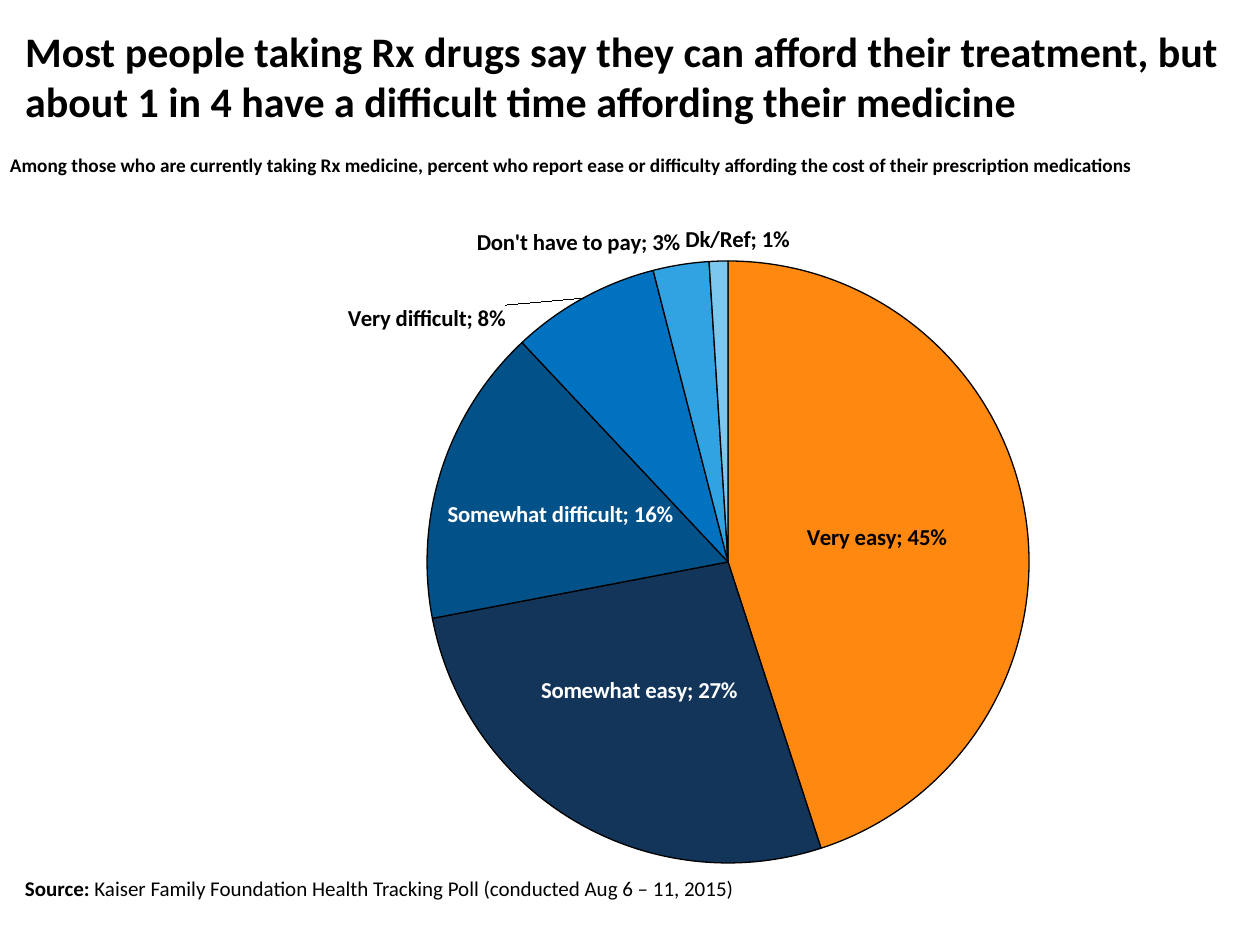
from dataclasses import dataclass
from typing import Optional

import pptx
import pptx.chart.data
import pptx.dml.color
import pptx.enum.chart
import pptx.enum.text
import pptx.oxml
import pptx.oxml.ns
import pptx.util

Position = pptx.enum.chart.XL_LABEL_POSITION
Anchor = pptx.enum.text.MSO_ANCHOR
WIDTH, HEIGHT = pptx.util.Inches(10), pptx.util.Inches(7.5)


@dataclass(frozen=True)
class Theme:
    font: str = "Calibri"
    black: str = "000000"
    white: str = "FFFFFF"
    title_size: int = 24
    label_size: int = 13
    source_size: int = 12
    subtitle_size: int = 11


@dataclass(frozen=True)
class Box:
    """Left, top, width and height in inches."""
    left: float
    top: float
    width: float
    height: float

    def lengths(self) -> list:
        return [pptx.util.Inches(value) for value in
                (self.left, self.top, self.width, self.height)]


@dataclass(frozen=True)
class Slice:
    name: str
    share: float
    fill: str
    label_color: str = "000000"
    position: Optional[Position] = None
    shift: tuple = (0, 0)  # label offset, as shares of the chart's size


THEME = Theme()
SLICES = [
    Slice("Very easy", 0.45, "FF8811", THEME.black, Position.CENTER),
    Slice("Somewhat easy", 0.27, "133559", THEME.white, Position.CENTER, (-0.01, 0)),
    Slice("Somewhat difficult", 0.16, "025189", THEME.white, Position.CENTER, (-0.02, 0)),
    Slice("Very difficult", 0.08, "0072C0", THEME.black, Position.OUTSIDE_END, (-0.06, 0.06)),
    Slice("Don't have to pay", 0.03, "31A3E3"),
    Slice("Dk/Ref", 0.01, "7BC7ED"),
]
CHART_BOX = Box(-0.02, 1.67, 9.82, 5.43)
PIE_BOX = Box(3.39, 2.07, 4.78, 4.78)


def rgb(color: str):
    return pptx.dml.color.RGBColor.from_string(color)


def style_font(font, size: int, color: str = THEME.black, bold: Optional[bool] = True) -> None:
    font.name = THEME.font
    font.size = pptx.util.Pt(size)
    font.color.rgb = rgb(color)
    font.bold = bold


def xml(body: str):
    tag, rest = body[1:].split(" ", 1)
    return pptx.oxml.parse_xml(f"<{tag} {pptx.oxml.ns.nsdecls('c')} {rest}")


def manual_layout(x: float, y: float, extra: str = "", target: str = ""):
    return xml(f'<c:layout ><c:manualLayout>{target}<c:x val="{x:.3f}"/>'
               f'<c:y val="{y:.3f}"/>{extra}</c:manualLayout></c:layout>')


def place_pie(chart) -> None:
    """Fix the plot area so that the circle fills PIE_BOX."""
    plot_area = chart._chartSpace.chart.plotArea
    for old in plot_area.findall(pptx.oxml.ns.qn("c:layout")):
        plot_area.remove(old)
    plot_area.insert(0, manual_layout(
        (PIE_BOX.left - CHART_BOX.left) / CHART_BOX.width,
        (PIE_BOX.top - CHART_BOX.top) / CHART_BOX.height,
        f'<c:w val="{PIE_BOX.width / CHART_BOX.width:.3f}"/>'
        f'<c:h val="{PIE_BOX.height / CHART_BOX.height:.3f}"/>',
        '<c:layoutTarget val="inner"/><c:xMode val="edge"/><c:yMode val="edge"/>'))


def label_point(series, index: int, item: Slice) -> None:
    label = series.points[index].data_label
    style_font(label.font, THEME.label_size, item.label_color)
    label.position = item.position
    element = series._element.xpath(f"c:dLbls/c:dLbl[c:idx/@val='{index}']")[0]
    element.find(pptx.oxml.ns.qn("c:showCatName")).set("val", "1")
    element.insert(1, xml('<c:numFmt formatCode="0%" sourceLinked="0"/>'))
    if any(item.shift):
        element.insert(1, manual_layout(*item.shift))


def add_pie(slide) -> None:
    data = pptx.chart.data.CategoryChartData(number_format="0%")
    data.categories = [item.name for item in SLICES]
    data.add_series("Series 1", [item.share for item in SLICES])
    chart = slide.shapes.add_chart(
        pptx.enum.chart.XL_CHART_TYPE.PIE, *CHART_BOX.lengths(), data).chart
    chart.has_legend = False
    chart.has_title = False
    style_font(chart.font, THEME.label_size)
    place_pie(chart)

    series = chart.plots[0].series[0]
    labels = series.data_labels
    style_font(labels.font, THEME.label_size)
    labels.number_format = "0%"
    labels.number_format_is_linked = False
    labels.show_value = labels.show_category_name = True
    labels.show_percentage = labels.show_legend_key = False
    labels.position = Position.BEST_FIT
    for index, item in enumerate(SLICES):
        slice_format = series.points[index].format
        slice_format.fill.solid()
        slice_format.fill.fore_color.rgb = rgb(item.fill)
        slice_format.line.color.rgb = rgb(THEME.black)
        slice_format.line.width = pptx.util.Pt(0.75)
        if item.position is not None:
            label_point(series, index, item)


def add_text(slide, box: Box, size: int, runs: list, anchor: Anchor, wrap: bool = True) -> None:
    """Add one line of text from (text, bold) pairs."""
    frame = slide.shapes.add_textbox(*box.lengths()).text_frame
    frame.word_wrap = wrap
    frame.vertical_anchor = anchor
    paragraph = frame.paragraphs[0]
    style_font(paragraph.font, size, bold=None)
    for text, bold in runs:
        run = paragraph.add_run()
        run.text = text
        run.font.bold = bold


def set_title(slide, text: str) -> None:
    title = slide.shapes.title
    title.left, title.top, title.width, title.height = Box(0.1, 0.1, 9.8, 1).lengths()
    title.text_frame.text = text
    title.text_frame.vertical_anchor = Anchor.MIDDLE
    paragraph = title.text_frame.paragraphs[0]
    paragraph.alignment = pptx.enum.text.PP_ALIGN.LEFT
    style_font(paragraph.font, THEME.title_size)


def main() -> None:
    presentation = pptx.Presentation()
    presentation.slide_width, presentation.slide_height = WIDTH, HEIGHT
    slide = presentation.slides.add_slide(presentation.slide_layouts[5])
    add_pie(slide)
    set_title(slide, "Most people taking Rx drugs say they can afford their treatment, "
                     "but about 1 in 4 have a difficult time affording their medicine")
    add_text(slide, Box(-0.02, 1.17, 9.21, 0.29), THEME.subtitle_size,
             [("Among those who are currently taking Rx medicine, percent who report ease or "
               "difficulty affording the cost of their prescription medications", True)],
             Anchor.TOP, wrap=False)
    add_text(slide, Box(0.1, 6.4, 9.8, 0.8), THEME.source_size,
             [("Source:", True),
              (" Kaiser Family Foundation Health Tracking Poll (conducted Aug 6 – 11, 2015)", False)],
             Anchor.BOTTOM)
    presentation.save("out.pptx")


if __name__ == "__main__":
    main()
